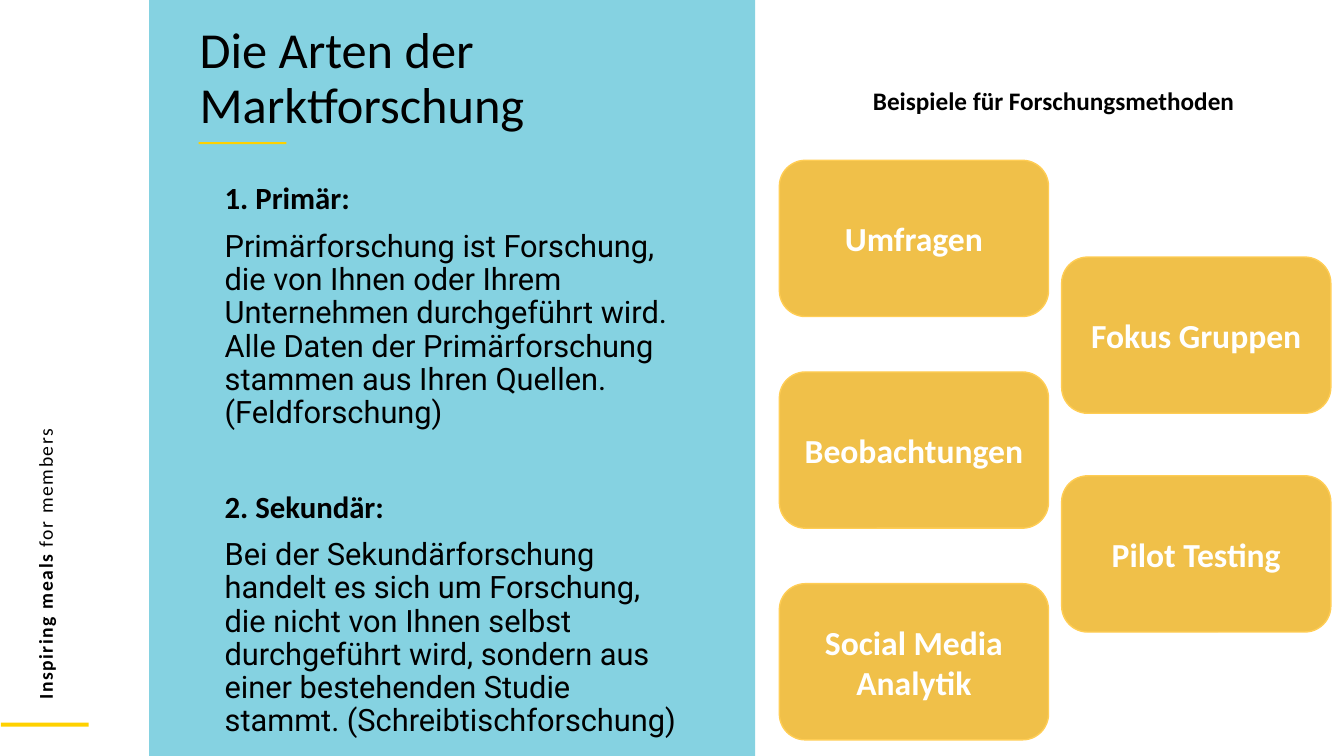
"""Build the slide on the kinds of market research."""
from dataclasses import dataclass

from pptx import Presentation
from pptx import util as u
from pptx.dml.color import RGBColor
from pptx.enum import shapes, text


@dataclass(frozen=True)
class Theme:
    panel: str = "85D2E1"
    rule: str = "FFD100"
    card: str = "F0C049"
    edge: str = "FFCD54"
    ink: str = "000000"
    white: str = "FFFFFF"
    font: str = "Calibri"
    prose: str = "Roboto"
    title: int = 36
    label: int = 24
    body: int = 22
    head: int = 18
    motto: int = 14


@dataclass(frozen=True)
class Box:
    x: float
    y: float
    w: float
    h: float

    def dims(self) -> tuple:
        return tuple(u.Inches(n) for n in (self.x, self.y, self.w, self.h))


@dataclass(frozen=True)
class Bar:
    box: Box
    fill: str


@dataclass(frozen=True)
class Column:
    x: float
    top: float
    step: float
    labels: tuple


@dataclass(frozen=True)
class Part:
    words: str
    font: str
    bold: bool
    gap: int


THEME = Theme()

BARS = (
    Bar(Box(1.48, 0, 6.01, 7.5), THEME.panel),
    Bar(Box(0.01, 7.17, 0.87, 0.04), THEME.rule),
    Bar(Box(1.97, 1.41, 0.87, 0.02), THEME.rule),
)

COLUMNS = (
    Column(7.73, 1.59, 2.1, ("Umfragen", "Beobachtungen", "Social Media Analytik")),
    Column(10.53, 2.55, 2.17, ("Fokus Gruppen", "Pilot Testing")),
)

PARTS = (
    Part("1. Primär:", THEME.font, True, 10),
    Part("Primärforschung ist Forschung, die von Ihnen oder Ihrem Unternehmen "
         "durchgeführt wird. Alle Daten der Primärforschung stammen aus Ihren "
         "Quellen. (Feldforschung)", THEME.prose, False, 10),
    Part("2. Sekundär:", THEME.font, True, 44),
    Part("Bei der Sekundärforschung handelt es sich um Forschung, die nicht von "
         "Ihnen selbst durchgeführt wird, sondern aus einer bestehenden Studie "
         "stammt. (Schreibtischforschung)", THEME.prose, False, 10),
)


def add_run(para, words: str, size: int, bold: bool = False,
            color: str = THEME.ink, font: str = THEME.font):
    run = para.add_run()
    run.text = words
    run.font.name = font
    run.font.size = u.Pt(size)
    run.font.bold = bold
    run.font.color.rgb = RGBColor.from_string(color)
    return run


def add_form(slide, kind, box: Box, fill: str):
    form = slide.shapes.add_shape(kind, *box.dims())
    form.shadow.inherit = False
    form.fill.solid()
    form.fill.fore_color.rgb = RGBColor.from_string(fill)
    form.line.fill.background()
    return form


def add_card(slide, box: Box, label: str) -> None:
    card = add_form(slide, shapes.MSO_SHAPE.FLOWCHART_ALTERNATE_PROCESS, box, THEME.card)
    card.line.color.rgb = RGBColor.from_string(THEME.edge)
    card.line.width = u.Pt(1)
    frame = card.text_frame
    frame.word_wrap = True
    frame.vertical_anchor = text.MSO_ANCHOR.MIDDLE
    para = frame.paragraphs[0]
    para.alignment = text.PP_ALIGN.CENTER
    add_run(para, label, THEME.label, True, THEME.white)


def add_text(slide, box: Box):
    note = slide.shapes.add_textbox(*box.dims())
    note.text_frame.word_wrap = True
    return note


def set_lines(para, gap: int) -> None:
    para.line_spacing = 0.9
    para.space_before = u.Pt(gap)


def set_title(slide, box: Box, words: str) -> None:
    title = slide.shapes.title
    title.left, title.top, title.width, title.height = box.dims()
    title.element.getparent().append(title.element)
    frame = title.text_frame
    frame.word_wrap = True
    frame.auto_size = text.MSO_AUTO_SIZE.NONE
    frame.vertical_anchor = text.MSO_ANCHOR.TOP
    para = frame.paragraphs[0]
    para.alignment = text.PP_ALIGN.LEFT
    set_lines(para, 10)
    add_run(para, words, THEME.title)


def add_body(slide, box: Box) -> None:
    frame = add_text(slide, box).text_frame
    for i, part in enumerate(PARTS):
        para = frame.add_paragraph() if i else frame.paragraphs[0]
        set_lines(para, part.gap)
        para._p.get_or_add_pPr().set("marL", str(u.Inches(0.25)))
        add_run(para, part.words, THEME.body, part.bold, font=part.font)


def add_motto(slide, box: Box) -> None:
    note = add_text(slide, box)
    note.rotation = 270
    para = note.text_frame.paragraphs[0]
    for words, bold in (("Inspiring meals ", True), ("for members", False)):
        run = add_run(para, words, THEME.motto, bold)
        run._r.get_or_add_rPr().set("spc", "110")


def main() -> None:
    deck = Presentation()
    deck.slide_width, deck.slide_height = u.Inches(13.33), u.Inches(7.5)
    slide = deck.slides.add_slide(deck.slide_layouts.get_by_name("Title Only"))
    for bar in BARS:
        add_form(slide, shapes.MSO_SHAPE.RECTANGLE, bar.box, bar.fill)
    add_motto(slide, Box(-3.32, 3.1, 7.54, 0.34))
    add_body(slide, Box(1.88, 1.77, 5.05, 4.95))
    set_title(slide, Box(1.88, 0.2, 5.16, 1.28), "Die Arten der Marktforschung")
    for col in COLUMNS:
        for i, label in enumerate(col.labels):
            add_card(slide, Box(col.x, col.top + i * col.step, 2.67, 1.55), label)
    head = add_text(slide, Box(8.56, 0.8, 3.94, 0.4))
    add_run(head.text_frame.paragraphs[0], "Beispiele für Forschungsmethoden",
            THEME.head, True)
    deck.save("out.pptx")


if __name__ == "__main__":
    main()
